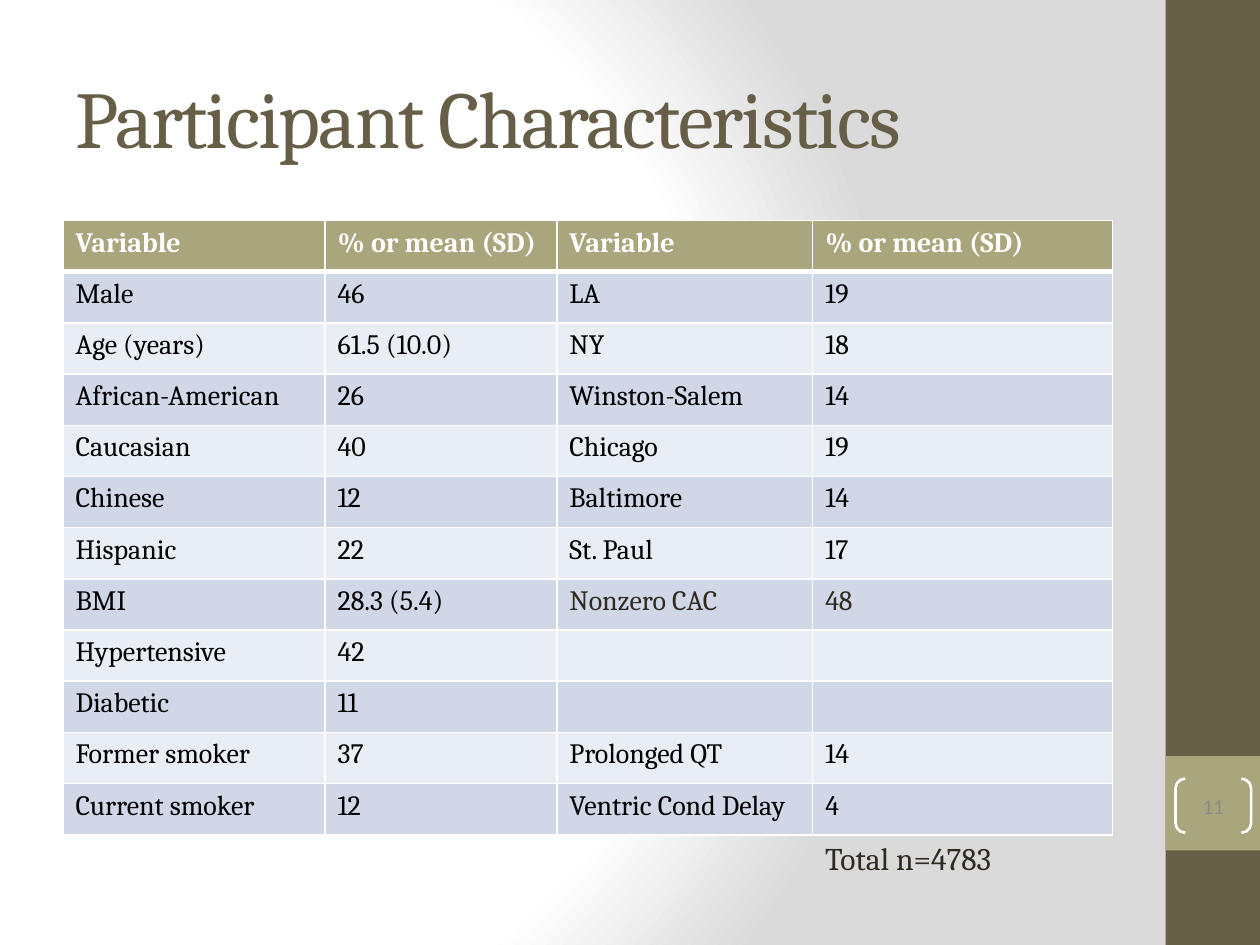
import lxml.etree
import pptx
import pptx.dml.color
import pptx.enum.shapes
import pptx.enum.text
import pptx.oxml
import pptx.oxml.ns
import pptx.util

Inches = pptx.util.Inches
Pt = pptx.util.Pt
RGBColor = pptx.dml.color.RGBColor
MSO_SHAPE = pptx.enum.shapes.MSO_SHAPE
PP_ALIGN = pptx.enum.text.PP_ALIGN
MSO_ANCHOR = pptx.enum.text.MSO_ANCHOR
qn = pptx.oxml.ns.qn

WHITE = RGBColor(0xFF, 0xFF, 0xFF)
BLACK = RGBColor(0x00, 0x00, 0x00)
DARK = RGBColor(0x2F, 0x2B, 0x20)
BROWN = RGBColor(0x67, 0x5E, 0x47)
OLIVE = RGBColor(0xA9, 0xA5, 0x7C)
GREY = RGBColor(0x8B, 0x8B, 0x8B)
BAND_DARK = RGBColor(0xD0, 0xD8, 0xE8)
BAND_LIGHT = RGBColor(0xE9, 0xED, 0xF4)
BACKGROUND = RGBColor(0xDA, 0xDA, 0xDA)

ROWS = [
    ("Variable", "% or mean (SD)", "Variable", "% or mean (SD)"),
    ("Male", "46", "LA", "19"),
    ("Age (years)", "61.5 (10.0)", "NY", "18"),
    ("African-American", "26", "Winston-Salem", "14"),
    ("Caucasian", "40", "Chicago", "19"),
    ("Chinese", "12", "Baltimore", "14"),
    ("Hispanic", "22", "St. Paul", "17"),
    ("BMI", "28.3 (5.4)", "Nonzero CAC", "48"),
    ("Hypertensive", "42", "", ""),
    ("Diabetic", "11", "", ""),
    ("Former smoker", "37", "Prolonged QT", "14"),
    ("Current smoker", "12", "Ventric Cond Delay", "4"),
]
COLUMN_WIDTHS = [2.08, 1.84, 2.03, 2.38]
TABLE_HEIGHT = 4.88


def style_text(paragraph, size, color, bold=False):
    font = paragraph.font
    font.name = "Cambria"
    font.size = Pt(size)
    font.bold = bold
    font.color.rgb = color


def add_border(cell, side, width):
    """Draw a white line on one side of the cell: L, R, T or B."""
    line = lxml.etree.SubElement(
        cell._tc.get_or_add_tcPr(), qn(f"a:ln{side}"), w=str(Pt(width)))
    fill = lxml.etree.SubElement(line, qn("a:solidFill"))
    lxml.etree.SubElement(fill, qn("a:srgbClr"), val=str(WHITE))


presentation = pptx.Presentation()
presentation.slide_width = Inches(10)
presentation.slide_height = Inches(7.5)
slide = presentation.slides.add_slide(presentation.slide_layouts[5])

# Background: white centre fading to grey
slide.background.fill.solid()
solid_fill = slide._element.find(".//" + qn("p:bgPr")).find(qn("a:solidFill"))
gradient = pptx.oxml.parse_xml(f"""
<a:gradFill {pptx.oxml.ns.nsdecls("a")} rotWithShape="1">
  <a:gsLst>
    <a:gs pos="0"><a:srgbClr val="{WHITE}"/></a:gs>
    <a:gs pos="75000"><a:srgbClr val="{WHITE}"/></a:gs>
    <a:gs pos="100000"><a:srgbClr val="{BACKGROUND}"/></a:gs>
  </a:gsLst>
  <a:path path="circle">
    <a:fillToRect l="20000" t="50000" r="100000" b="50000"/>
  </a:path>
</a:gradFill>""")
solid_fill.getparent().replace(solid_fill, gradient)

# Side bar with the page number
for top, height, color in [(0, 7.5, BROWN), (6, 0.75, OLIVE)]:
    bar = slide.shapes.add_shape(
        MSO_SHAPE.RECTANGLE, Inches(9.25), Inches(top), Inches(0.75), Inches(height))
    bar.shadow.inherit = False
    bar.fill.solid()
    bar.fill.fore_color.rgb = color
    bar.line.fill.background()

page_number = slide.shapes.add_shape(
    MSO_SHAPE.DOUBLE_BRACKET, Inches(9.33), Inches(6.18), Inches(0.6), Inches(0.43))
page_number.adjustments[0] = 0.18
page_number.shadow.inherit = False
page_number.fill.background()
page_number.line.color.rgb = WHITE
page_number.line.width = Pt(1.5)
frame = page_number.text_frame
frame.margin_left = frame.margin_right = 0
frame.vertical_anchor = MSO_ANCHOR.MIDDLE
paragraph = frame.paragraphs[0]
paragraph.text = "11"
paragraph.alignment = PP_ALIGN.CENTER
paragraph.font.size = Pt(12)
paragraph.font.color.rgb = GREY

# Title
title = slide.shapes.title
title.left, title.top = Inches(0.5), Inches(0.3)
title.width, title.height = Inches(8.33), Inches(1.25)
title.text_frame.vertical_anchor = MSO_ANCHOR.MIDDLE
paragraph = title.text_frame.paragraphs[0]
paragraph.text = "Participant Characteristics"
paragraph.alignment = PP_ALIGN.LEFT
style_text(paragraph, 46, BROWN)
paragraph.runs[0]._r.get_or_add_rPr().set("spc", "-100")

# Characteristics table
table = slide.shapes.add_table(
    len(ROWS), len(COLUMN_WIDTHS), Inches(0.5), Inches(1.75),
    Inches(sum(COLUMN_WIDTHS)), Inches(TABLE_HEIGHT)).table
for column, width in zip(table.columns, COLUMN_WIDTHS):
    column.width = Inches(width)

for row_index, row in enumerate(ROWS):
    header = row_index == 0
    band = OLIVE if header else BAND_DARK if row_index % 2 else BAND_LIGHT
    for column_index, text in enumerate(row):
        cell = table.cell(row_index, column_index)
        add_border(cell, "L", 1)
        add_border(cell, "R", 1)
        add_border(cell, "T", 3 if row_index == 1 else 1)
        add_border(cell, "B", 3 if header else 1)
        cell.fill.solid()
        cell.fill.fore_color.rgb = band
        paragraph = cell.text_frame.paragraphs[0]
        paragraph.text = text
        highlighted = "Nonzero CAC" in row and column_index >= 2
        color = WHITE if header else DARK if highlighted else BLACK
        style_text(paragraph, 16, color, bold=header)

# Total below the last column
total = slide.shapes.add_textbox(Inches(6.45), Inches(6.61), Inches(2.38), Inches(0.4))
total.text_frame.word_wrap = True
paragraph = total.text_frame.paragraphs[0]
paragraph.text = "Total n=4783"
style_text(paragraph, 18, DARK)

presentation.save("out.pptx")
